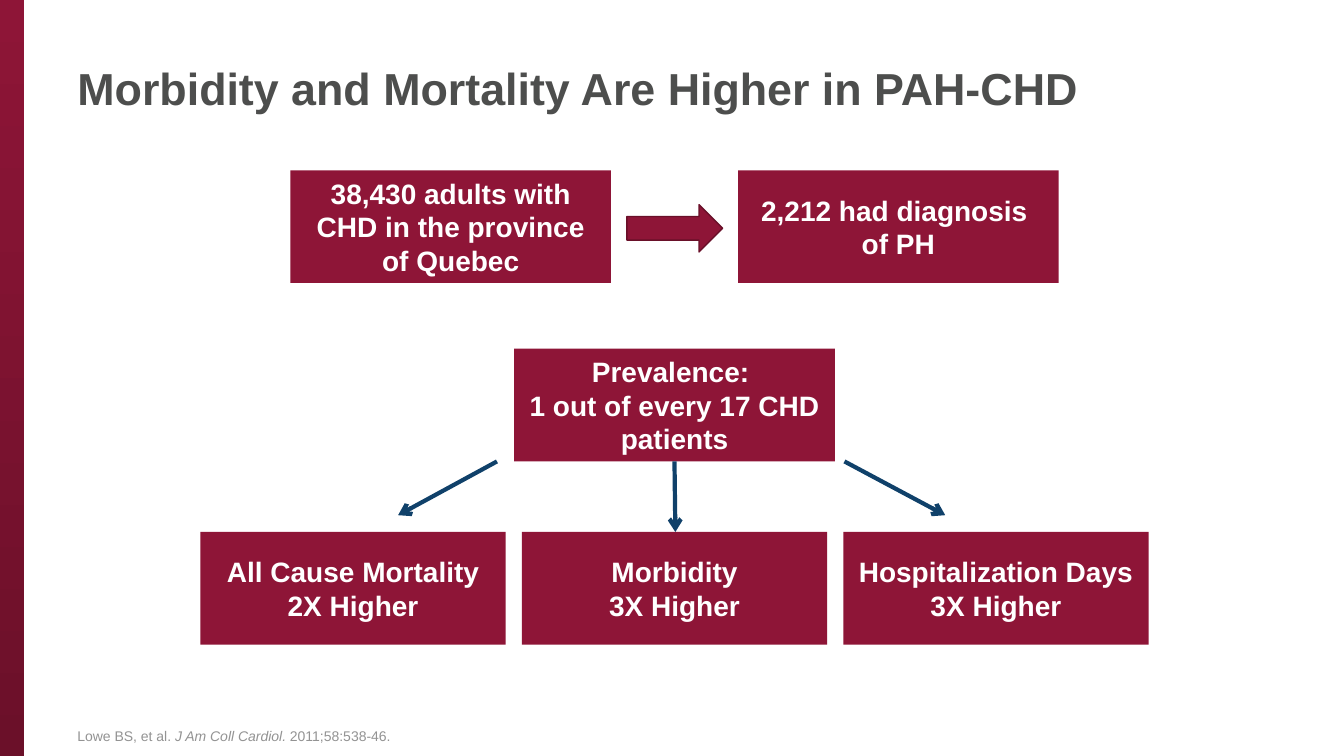
from lxml.etree import SubElement
from pptx import Presentation
from pptx.dml.color import RGBColor
from pptx.enum.shapes import MSO_CONNECTOR, MSO_SHAPE
from pptx.enum.text import MSO_ANCHOR, PP_ALIGN
from pptx.oxml.ns import qn
from pptx.util import Pt

# Content: one string per paragraph, *italic* between asterisks
TITLE = ["Morbidity and Mortality Are Higher in PAH-CHD"]
POPULATION = [
    ["38,430 adults with CHD in the province of Quebec"],
    ["2,212 had diagnosis ", "of PH"],
]
PREVALENCE = ["Prevalence: ", "1 out of every 17 CHD patients"]
OUTCOMES = [
    ["All Cause Mortality", "2X Higher"],
    ["Morbidity", "3X Higher"],
    ["Hospitalization Days", "3X Higher"],
]
CITATION = ["Lowe BS, et al. *J Am Coll Cardiol. *2011;58:538-46."]

# Colours and layout, in points
CRIMSON, DARK_CRIMSON, NAVY = "8E1537", "691029", "10416A"
WIDTH, HEIGHT = 960, 540
CENTER = 481.8
BOX_WIDTH, BOX_HEIGHT = 229, 80.5
POPULATION_TOP, PREVALENCE_TOP, OUTCOME_TOP = 121.7, 249.1, 380
POPULATION_PITCH = 319.7
OUTCOME_WIDTH, OUTCOME_PITCH = 218, 229.6
MARGIN, TEXT_WIDTH = 48.2, 846


def color(hex_code):
    return RGBColor.from_string(hex_code)


def write(shape, paragraphs, size, ink, bold=False, align=PP_ALIGN.LEFT, anchor=MSO_ANCHOR.MIDDLE):
    frame = shape.text_frame
    frame.word_wrap = True
    frame.vertical_anchor = anchor
    for index, content in enumerate(paragraphs):
        paragraph = frame.add_paragraph() if index else frame.paragraphs[0]
        paragraph.alignment = align
        for part, words in enumerate(content.split("*")):
            run = paragraph.add_run()
            run.text = words
            run.font.name = "Arial"
            run.font.size = Pt(size)
            run.font.bold = bold
            run.font.italic = part % 2 == 1
            run.font.color.rgb = color(ink)


def add_block(left, top, width, height, kind=MSO_SHAPE.RECTANGLE):
    block = slide.shapes.add_shape(kind, Pt(left), Pt(top), Pt(width), Pt(height))
    block.shadow.inherit = False
    block.fill.solid()
    block.fill.fore_color.rgb = color(CRIMSON)
    block.line.fill.background()
    return block


def add_box(center, top, width, paragraphs):
    box = add_block(center - width / 2, top, width, BOX_HEIGHT)
    write(box, paragraphs, size=20, ink="FFFFFF", bold=True, align=PP_ALIGN.CENTER)


def add_caption(top, height, paragraphs, **text_format):
    caption = slide.shapes.add_textbox(Pt(MARGIN), Pt(top), Pt(TEXT_WIDTH), Pt(height))
    write(caption, paragraphs, **text_format)


def add_arrow(start_x, start_y, end_x, end_y):
    arrow = slide.shapes.add_connector(
        MSO_CONNECTOR.STRAIGHT, Pt(start_x), Pt(start_y), Pt(end_x), Pt(end_y))
    arrow.line.color.rgb = color(NAVY)
    arrow.line.width = Pt(3)
    properties = arrow.element.spPr
    SubElement(properties.find(qn("a:ln")), qn("a:tailEnd"), type="arrow")
    SubElement(properties, qn("a:effectLst"))


presentation = Presentation()
presentation.slide_width, presentation.slide_height = Pt(WIDTH), Pt(HEIGHT)
slide = presentation.slides.add_slide(presentation.slide_layouts[6])

# Side band, shaded from top to bottom
band = add_block(-0.7, 0, 18, HEIGHT + 0.7)
band.fill.gradient()
band.fill.gradient_angle = 270
for stop, shade in zip(band.fill.gradient_stops, (CRIMSON, "6B1029")):
    stop.color.rgb = color(shade)

# Title and citation
add_caption(15.8, 93.6, TITLE, size=32, ink="4D4E4D", bold=True)
add_caption(500.4, 34.6, CITATION, size=10, ink="939393", anchor=MSO_ANCHOR.BOTTOM)

# Population row with block arrow
for side, paragraphs in zip((-0.5, 0.5), POPULATION):
    add_box(CENTER + side * POPULATION_PITCH, POPULATION_TOP, BOX_WIDTH, paragraphs)
step = add_block(447.8, 146.2, 68.4, 33.8, MSO_SHAPE.RIGHT_ARROW)
step.line.color.rgb = color(DARK_CRIMSON)
step.line.width = Pt(1)

# Prevalence, outcomes and the arrows between them
add_box(CENTER, PREVALENCE_TOP, BOX_WIDTH, PREVALENCE)
for side, paragraphs in zip((-1, 0, 1), OUTCOMES):
    add_box(CENTER + side * OUTCOME_PITCH, OUTCOME_TOP, OUTCOME_WIDTH, paragraphs)
arrow_top = PREVALENCE_TOP + BOX_HEIGHT
add_arrow(355, arrow_top, 284.4, 368)
add_arrow(CENTER, arrow_top, CENTER + 0.6, OUTCOME_TOP)
add_arrow(603.2, arrow_top, 675.2, 368)

presentation.save("out.pptx")
